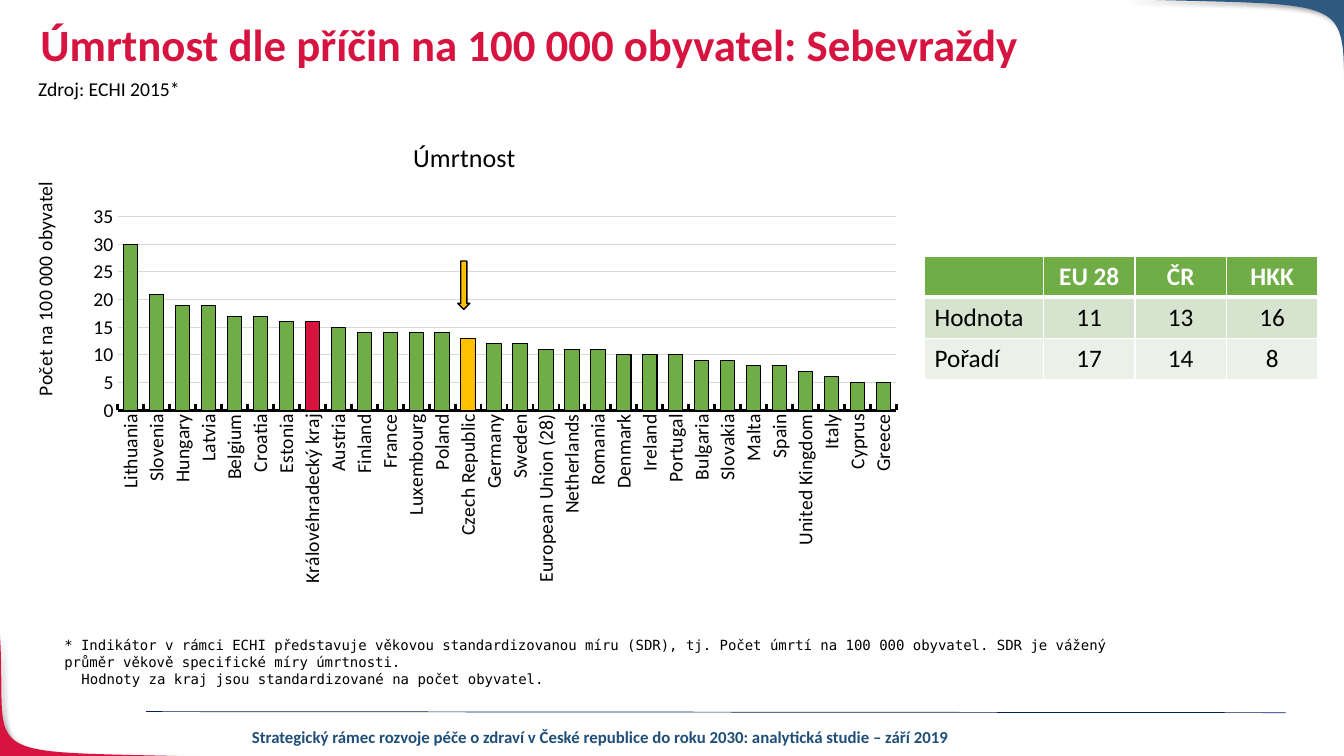
from dataclasses import dataclass
from typing import Any

from lxml.etree import SubElement, fromstring
from pptx import Presentation
from pptx.chart.data import CategoryChartData as Data
from pptx.dml.color import RGBColor
from pptx.enum.chart import XL_CHART_TYPE as Kind, XL_TICK_MARK as Tick
from pptx.enum.shapes import MSO_CONNECTOR as Conn, MSO_SHAPE as Form
from pptx.enum.text import MSO_ANCHOR as Anchor, PP_ALIGN as Align
from pptx.oxml.ns import nsdecls, qn
from pptx.util import Inches, Pt

RED, BLUE, GREEN, GOLD = "D71440", "2E5980", "70AD47", "FFC000"
BLACK, WHITE = "000000", "FFFFFF"
SANS, MONO = "Calibri", "DejaVu Sans Mono"
WIDE, HIGH = Inches(13.33), Inches(7.5)
UP = "-5400000"

Spot = tuple[float, float]


@dataclass
class Box:
    left: float
    top: float
    width: float
    height: float

    def area(self) -> tuple[int, int, int, int]:
        return across(self.left), down(self.top), across(self.width), down(self.height)


@dataclass
class Label:
    box: Box
    lines: list[str]
    size: float
    face: str = SANS
    tint: str = BLACK
    bold: bool = False
    align: Any = Align.LEFT


@dataclass
class Corner:
    curve: tuple[Spot, Spot, Spot, Spot]
    tip: Spot
    tint: str


CORNERS = [
    Corner(((15.98, 100.13), (-2.55, 99.2), (0.6, 101.2), (0, 84)), (-0.08, 100.13), RED),
    Corner(((83.35, -0.13), (102.78, 0.93), (99.47, -1.33), (100.15, 18.93)), (100.15, -0.13), BLUE),
]
FOOTER = "Strategický rámec rozvoje péče o zdraví v České republice do roku 2030: analytická studie – září 2019"
NOTE = [
    "* Indikátor v rámci ECHI představuje věkovou standardizovanou míru (SDR), tj. Počet úmrtí na "
    "100 000 obyvatel. SDR je vážený průměr věkově specifické míry úmrtnosti.",
    "Hodnoty za kraj jsou standardizované na počet obyvatel.",
]
LABELS = [
    Label(Box(14.33, 95.47, 60.69, 4), [FOOTER], 12, tint="1F4E79", bold=True, align=Align.CENTER),
    Label(Box(4.05, 83.53, 80.57, 9.87), NOTE, 10, MONO),
    Label(Box(2.1, 9.47, 14, 4.53), ["Zdroj: ECHI 2015*"], 14),
]
RATES = {
    "Lithuania": 30, "Slovenia": 21, "Hungary": 19, "Latvia": 19, "Belgium": 17,
    "Croatia": 17, "Estonia": 16, "Královéhradecký kraj": 16, "Austria": 15,
    "Finland": 14, "France": 14, "Luxembourg": 14, "Poland": 14, "Czech Republic": 13,
    "Germany": 12, "Sweden": 12, "European Union (28)": 11, "Netherlands": 11,
    "Romania": 11, "Denmark": 10, "Ireland": 10, "Portugal": 10, "Bulgaria": 9,
    "Slovakia": 9, "Malta": 8, "Spain": 8, "United Kingdom": 7, "Italy": 6,
    "Cyprus": 5, "Greece": 5,
}
MARKED = {"Královéhradecký kraj": RED, "Czech Republic": GOLD}
RANKS = [["", "EU 28", "ČR", "HKK"], ["Hodnota", "11", "13", "16"], ["Pořadí", "17", "14", "8"]]
BANDS = [GREEN, "D5E3CF", "EBF1E9"]


def across(share: float) -> int:
    return round(WIDE * share / 100)


def down(share: float) -> int:
    return round(HIGH * share / 100)


def color(code: str) -> RGBColor:
    return RGBColor.from_string(code)


def paint(fill: Any, code: str) -> None:
    fill.solid()
    fill.fore_color.rgb = color(code)


def ink(line: Any, code: str, width: float) -> None:
    paint(line.fill, code)
    line.width = Pt(width)


def style(font: Any, size: float, code: str = BLACK, bold: bool = False, face: str = SANS) -> None:
    font.name, font.size, font.bold = face, Pt(size), bold
    font.color.rgb = color(code)


def bend(curve: tuple[Spot, Spot, Spot, Spot], t: float) -> Spot:
    parts = ((1 - t) ** 3, 3 * t * (1 - t) ** 2, 3 * t * t * (1 - t), t ** 3)
    x, y = (sum(p * s[i] for p, s in zip(parts, curve)) for i in (0, 1))
    return across(x), down(y)


def add_corner(shapes: Any, item: Corner) -> None:
    spots = [bend(item.curve, n / 40) for n in range(41)]
    pen = shapes.build_freeform(*spots[0])
    pen.add_line_segments([*spots[1:], (across(item.tip[0]), down(item.tip[1]))])
    shape = pen.convert_to_shape()
    paint(shape.fill, item.tint)
    shape.line.fill.background()
    shape.shadow.inherit = False
    glow = shape.element.xpath(".//a:effectLst")[0]
    glow.append(fromstring(
        f'<a:outerShdw {nsdecls("a")} blurRad="{Pt(4)}" dist="{Pt(3)}" dir="2700000" rotWithShape="0">'
        f'<a:srgbClr val="{BLACK}"><a:alpha val="40000"/></a:srgbClr></a:outerShdw>'))


def add_label(shapes: Any, item: Label) -> None:
    frame = shapes.add_textbox(*item.box.area()).text_frame
    frame.word_wrap = True
    frame.text = "\n".join(item.lines)
    for n, para in enumerate(frame.paragraphs):
        para.alignment = item.align
        if n:
            para._p.get_or_add_pPr().set("marL", str(Inches(0.17)))
        style(para.runs[0].font, item.size, item.tint, item.bold, item.face)


def place(host: Any, index: int, **shares: float) -> None:
    for old in host.findall(qn("c:layout")):
        host.remove(old)
    frame = fromstring(f'<c:layout {nsdecls("c")}/>')
    manual = SubElement(frame, qn("c:manualLayout"))
    if "w" in shares:
        SubElement(manual, qn("c:layoutTarget")).set("val", "inner")
    for side in "xy":
        SubElement(manual, qn(f"c:{side}Mode")).set("val", "edge")
    for side, share in shares.items():
        SubElement(manual, qn(f"c:{side}")).set("val", str(share / 100))
    host.insert(index, frame)


def add_title(title: Any, text: str, size: float, x: float, y: float) -> None:
    title.text_frame.text = text
    style(title.text_frame.paragraphs[0].runs[0].font, size)
    place(title.element, 1, x=x, y=y)


def add_rates(shapes: Any) -> None:
    data = Data()
    data.categories = list(RATES)
    data.add_series("Series 1", list(RATES.values()))
    chart = shapes.add_chart(Kind.COLUMN_CLUSTERED, *Box(1.58, 17.6, 66.39, 60.8).area(), data).chart
    style(chart.font, 10)
    chart.has_legend = False
    add_title(chart.chart_title, "Úmrtnost", 18.6, 43.4, 0.3)
    cats, vals = chart.category_axis, chart.value_axis
    for axis in (cats, vals):
        style(axis.tick_labels.font, 14)
    cats.major_tick_mark = Tick.INSIDE
    ink(cats.format.line, BLACK, 2)
    vals.minimum_scale, vals.maximum_scale, vals.major_unit = 0, 35, 5
    vals.major_tick_mark = Tick.NONE
    vals.tick_labels.number_format = "#,##0"
    vals.tick_labels.number_format_is_linked = False
    vals.format.line.fill.background()
    ink(vals.major_gridlines.format.line, "D9D9D9", 0.75)
    add_title(vals.axis_title, "Počet na 100 000 obyvatel", 14, 0.7, 9.8)
    root = chart.element
    for body in root.xpath(".//c:catAx/c:txPr/a:bodyPr | .//c:valAx/c:title//a:bodyPr"):
        body.set("rot", UP)
        body.set("vert", "horz")
    place(root.xpath(".//c:plotArea")[0], 0, x=10.8, y=18.2, w=87.3, h=42.1)
    plot = chart.plots[0]
    plot.gap_width, plot.overlap, plot.vary_by_categories = 81, -27, False
    bars = plot.series[0]
    bars.invert_if_negative = False
    for n, land in enumerate(RATES):
        if land in MARKED:
            look = bars.points[n].format
            paint(look.fill, MARKED[land])
            ink(look.line, BLACK, 0.75)
    paint(bars.format.fill, GREEN)
    ink(bars.format.line, BLACK, 0.75)


def add_ranks(shapes: Any) -> None:
    table = shapes.add_table(3, 4, *Box(68.79, 33.9, 29.28, 16.26).area()).table
    for n, col in enumerate(table.columns):
        col.width = across(6.81 if n else 8.85)
    for r, row in enumerate(RANKS):
        table.rows[r].height = down(5.42)
        for c, text in enumerate(row):
            cell = table.cell(r, c)
            cell.text = text
            para = cell.text_frame.paragraphs[0]
            para.alignment = Align.CENTER if c else Align.LEFT
            for part in (para, *para.runs):
                style(part.font, 18, BLACK if r else WHITE, not r)
            paint(cell.fill, BANDS[r])
            props = cell._tc.get_or_add_tcPr()
            for n, side in enumerate("LRTB"):
                thick = 3 if (r, side) in ((0, "B"), (1, "T")) else 1
                props.insert(n, fromstring(
                    f'<a:ln{side} {nsdecls("a")} w="{Pt(thick)}"><a:solidFill>'
                    f'<a:srgbClr val="{WHITE}"/></a:solidFill></a:ln{side}>'))


def main() -> None:
    deck = Presentation()
    deck.slide_width, deck.slide_height = WIDE, HIGH
    slide = deck.slides.add_slide(deck.slide_layouts[5])
    shapes = slide.shapes
    for item in CORNERS:
        add_corner(shapes, item)
    rule = shapes.add_connector(Conn.STRAIGHT, across(10.88), down(94.13), across(95.65), down(94.27))
    ink(rule.line, "002060", 0.5)
    SubElement(rule.element.spPr, qn("a:effectLst"))
    for label in LABELS:
        add_label(shapes, label)
    title = shapes.title
    title.left, title.top, title.width, title.height = Box(2.25, 2.4, 86.27, 9.2).area()
    frame = title.text_frame
    frame.text = "Úmrtnost dle příčin na 100 000 obyvatel: Sebevraždy"
    frame.vertical_anchor, frame.word_wrap = Anchor.TOP, True
    para = frame.paragraphs[0]
    para.alignment, para.line_spacing = Align.LEFT, 0.9
    style(para.runs[0].font, 32, RED, True)
    add_rates(shapes)
    arrow = shapes.add_shape(Form.DOWN_ARROW, *Box(34.06, 34.53, 0.9, 6.4).area())
    arrow.shadow.inherit = False
    paint(arrow.fill, GOLD)
    ink(arrow.line, BLACK, 1)
    add_ranks(shapes)
    deck.save("out.pptx")


if __name__ == "__main__":
    main()
